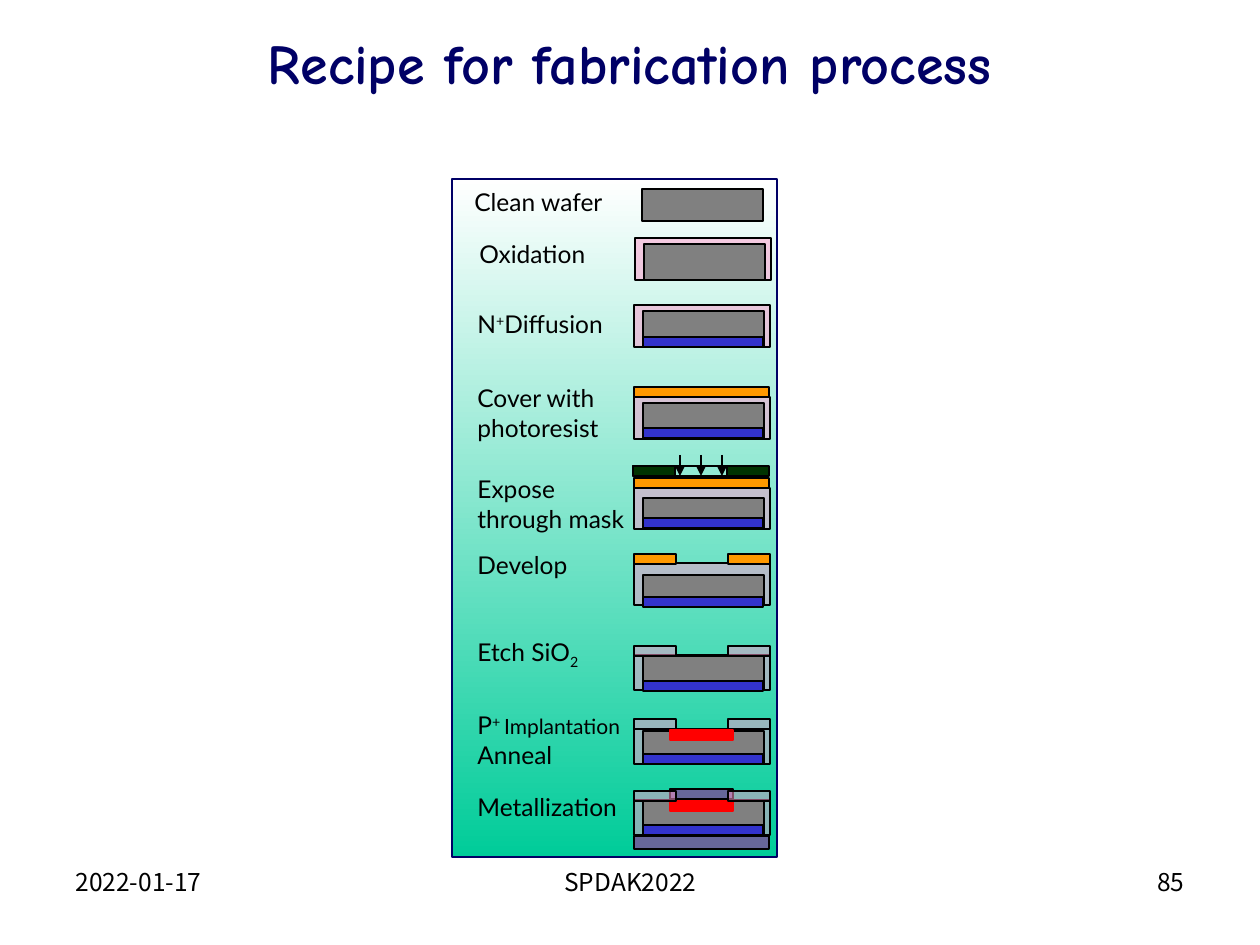
from lxml import etree
from pptx import Presentation
from pptx import util as u
from pptx.dml.color import RGBColor
from pptx.enum import shapes, text
from pptx.oxml.ns import qn

EMU_PER_PX = 914400 / 126

NAVY = RGBColor(0x00, 0x00, 0x66)
BLACK = RGBColor(0x00, 0x00, 0x00)
WHITE = RGBColor(0xFF, 0xFF, 0xFF)
TEAL = RGBColor(0x00, 0xCC, 0x99)
PINK = RGBColor(0xFF, 0x99, 0xCC)
GRAY = RGBColor(0x80, 0x80, 0x80)
BLUE = RGBColor(0x33, 0x33, 0xCC)
ORANGE = RGBColor(0xFF, 0x99, 0x00)
GREEN = RGBColor(0x00, 0x33, 0x00)
RED = RGBColor(0xFF, 0x00, 0x00)
METAL = RGBColor(0x66, 0x66, 0x99)

TITLE_FONT, LABEL_FONT, FOOTER_FONT = "Comic Neue", "Lato", "Noto Sans CJK KR"
LEFT, CENTER, RIGHT = text.PP_ALIGN.LEFT, text.PP_ALIGN.CENTER, text.PP_ALIGN.RIGHT

# Layer kind: (left, width) of each piece, fill, opacity in percent
WINDOW = [(634, 42), (728, 42)]
LAYERS = {
    "oxide": ([(634, 136)], PINK, 50),
    "wafer": ([(643, 121)], GRAY, 100),
    "n_plus": ([(643, 120)], BLUE, 100),
    "resist": ([(634, 135)], ORANGE, 100),
    "mask_frame": ([(633, 135)], None, 100),
    "mask": ([(633, 42), (727, 42)], GREEN, 100),
    "open_resist": (WINDOW, ORANGE, 100),
    "open_oxide": (WINDOW, PINK, 50),
    "p_plus": ([(670, 63)], RED, 100),
    "contact": ([(670, 63)], METAL, 100),
    "back_metal": ([(634, 135)], METAL, 100),
}
THIN = 10

# Label runs are (text, size, baseline in percent)
# Step: label runs, label (left, top, height), layer shift, layers (kind, top, height)
STEPS = [
    ([("Clean wafer", 14, 0)], (462, 181, 42), -1, [("wafer", 189, 32)]),
    ([("Oxidation", 14, 0)], (467, 233, 42), 1,
     [("oxide", 238, 42), ("wafer", 244, 36)]),
    ([("N", 14, 0), ("+", 14, 30), ("Diffusion", 14, 0)], (465, 303, 42), 0,
     [("oxide", 305, 42), ("wafer", 311, 36), ("n_plus", 337, THIN)]),
    ([("Cover with photoresist", 14, 0)], (465, 377, 72), 0,
     [("oxide", 397, 42), ("wafer", 403, 36), ("resist", 387, THIN),
      ("n_plus", 428, THIN)]),
    ([("Expose through mask", 14, 0)], (465, 468, 72), 0,
     [("oxide", 488, 41), ("wafer", 498, 31), ("resist", 478, THIN),
      ("mask_frame", 466, THIN), ("mask", 466, THIN), ("n_plus", 518, THIN)]),
    ([("Develop", 14, 0)], (465, 544, 42), 0,
     [("oxide", 563, 42), ("wafer", 575, 30), ("open_resist", 554, THIN),
      ("n_plus", 597, THIN)]),
    ([("Etch SiO", 14, 0), ("2", 14, -25)], (465, 631, 42), 0,
     [("oxide", 655, 35), ("wafer", 656, 33), ("open_oxide", 646, THIN),
      ("n_plus", 681, THIN)]),
    ([("P", 14, 0), ("+ ", 14, 30), ("Implantation", 12, 0), ("\v", 12, 0),
      ("Anneal", 14, 0)], (465, 704, 72), 0,
     [("oxide", 729, 35), ("wafer", 731, 33), ("open_oxide", 719, THIN),
      ("n_plus", 754, THIN), ("p_plus", 730, THIN)]),
    ([("Metallization", 14, 0)], (465, 786, 42), 0,
     [("oxide", 800, 35), ("wafer", 801, 33), ("n_plus", 825, THIN),
      ("p_plus", 801, THIN), ("contact", 789, THIN), ("open_oxide", 791, THIN),
      ("back_metal", 836, 13)]),
]


def px(n):
    return u.Emu(round(n * EMU_PER_PX))


def add_text(parent, box, runs, font, color, align=LEFT, bold=False,
             anchor=text.MSO_ANCHOR.TOP):
    sp = parent.add_textbox(*map(px, box))
    tf = sp.text_frame
    tf.word_wrap = True
    tf.vertical_anchor = anchor
    p = tf.paragraphs[0]
    p.alignment = align
    for words, size, baseline in runs:
        if words == "\v":
            p.add_line_break()
            continue
        r = p.add_run()
        r.text = words
        r.font.name, r.font.size = font, u.Pt(size)
        r.font.bold = bold
        r.font.color.rgb = color
        if baseline:
            r.font._element.set("baseline", str(baseline * 1000))


def add_rect(parent, box, fill, line=BLACK, opacity=100):
    sp = parent.add_shape(shapes.MSO_SHAPE.RECTANGLE, *map(px, box))
    sp.shadow.inherit = False
    sp.line.color.rgb = line
    sp.line.width = u.Pt(0.75)
    if fill is None:
        sp.fill.background()
        return sp
    sp.fill.solid()
    sp.fill.fore_color.rgb = fill
    if opacity < 100:
        clr = sp._element.spPr.find(qn("a:solidFill"))[0]
        etree.SubElement(clr, qn("a:alpha")).set("val", str(opacity * 1000))
    return sp


def add_panel(parent):
    sp = add_rect(parent, (452, 179, 325, 678), WHITE, NAVY)
    sp.fill.gradient()
    sp.fill.gradient_angle = 270
    for stop, color in zip(sp.fill.gradient_stops, (WHITE, TEAL)):
        stop.color.rgb = color


def add_arrow(parent, x, top, bottom):
    c = parent.add_connector(shapes.MSO_CONNECTOR.STRAIGHT,
                             px(x), px(top), px(x), px(bottom))
    c.line.color.rgb = BLACK
    c.line.width = u.Pt(0.75)
    ln = c.line._get_or_add_ln()
    etree.SubElement(ln, qn("a:tailEnd")).set("type", "triangle")
    etree.SubElement(c._element.spPr, qn("a:effectLst"))


def add_step(parent, runs, label, shift, layers):
    left, top, height = label
    add_text(parent, (left, top, 189, height), runs, LABEL_FONT, BLACK)
    for kind, y, h in layers:
        pieces, fill, opacity = LAYERS[kind]
        line = RED if kind == "p_plus" else BLACK
        for x, w in pieces:
            add_rect(parent, (x + shift, y, w, h), fill, line, opacity)


def main():
    prs = Presentation()
    prs.slide_width, prs.slide_height = px(1260), px(945)
    s = prs.slides.add_slide(prs.slide_layouts[6])

    # Title
    add_text(s.shapes, (0, 26, 1260, 72), [("Recipe for fabrication process", 32, 0)],
             TITLE_FONT, NAVY, CENTER, True, text.MSO_ANCHOR.MIDDLE)

    # Process steps on the gradient panel
    recipe = s.shapes.add_group_shape().shapes
    add_panel(recipe)
    for step in STEPS:
        add_step(recipe, *step)

    # Exposure light through the mask opening
    for i in range(3):
        add_arrow(recipe, 680 + 21 * i, 455, 476)

    # Footer
    for x, w, words, align in [(903, 294, "85", RIGHT), (63, 294, "2022-01-17", LEFT),
                               (431, 399, "SPDAK2022", CENTER)]:
        add_text(s.shapes, (x, 861, w, 66), [(words, 14, 0)], FOOTER_FONT, BLACK, align)

    prs.save("out.pptx")


if __name__ == "__main__":
    main()
